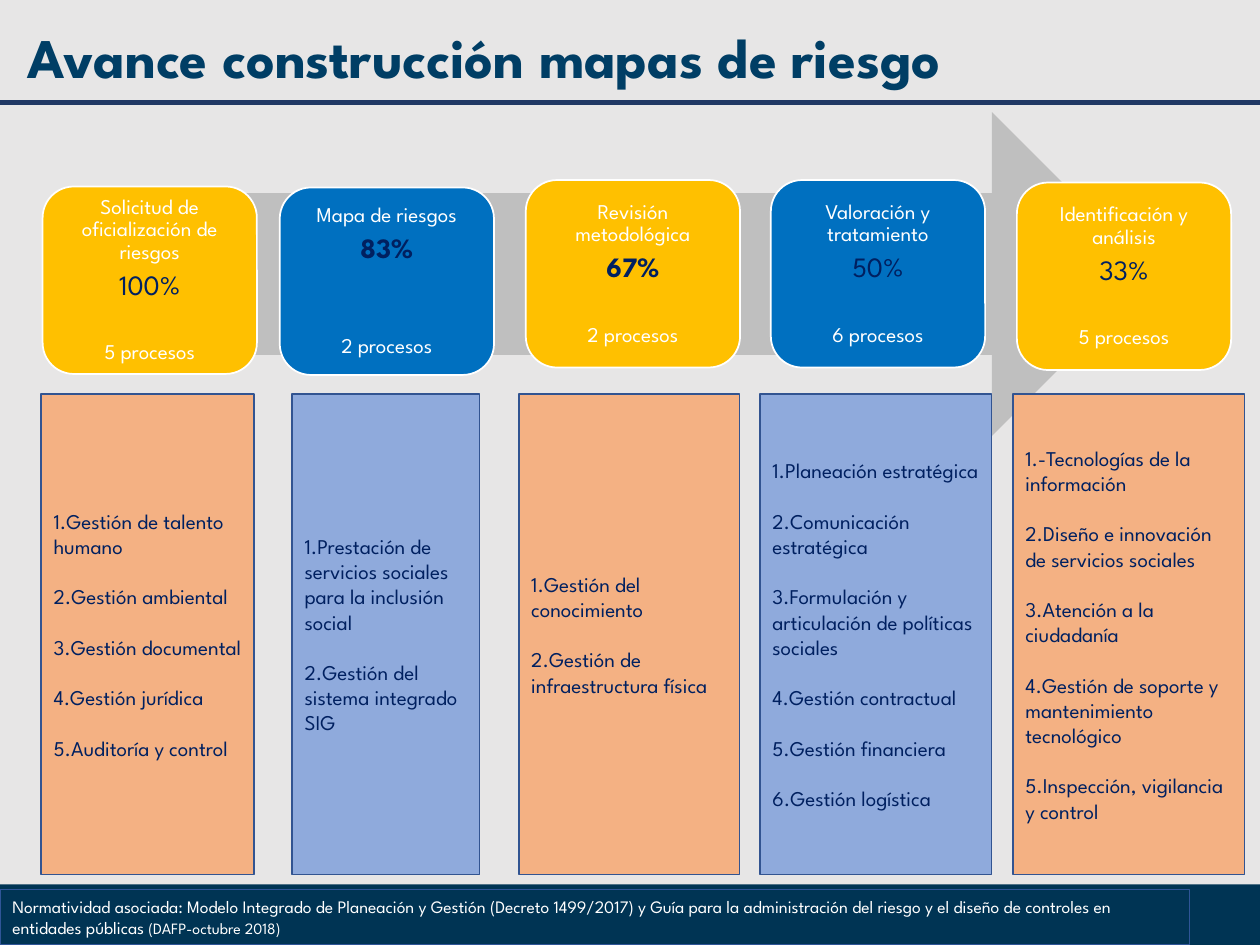
from dataclasses import dataclass

from lxml import etree
from pptx import Presentation
from pptx.dml.color import RGBColor
from pptx.enum.shapes import MSO_CONNECTOR, MSO_SHAPE
from pptx.enum.text import MSO_ANCHOR, PP_ALIGN
from pptx.oxml.ns import qn
from pptx.util import Cm, Pt

RECT, ROUNDED, ARROW = MSO_SHAPE.RECTANGLE, MSO_SHAPE.ROUNDED_RECTANGLE, MSO_SHAPE.RIGHT_ARROW
STRAIGHT = MSO_CONNECTOR.STRAIGHT
TOP, MIDDLE = MSO_ANCHOR.TOP, MSO_ANCHOR.MIDDLE
LEFT, CENTER = PP_ALIGN.LEFT, PP_ALIGN.CENTER


@dataclass(frozen=True)
class Theme:
    font: str = "League Spartan"
    background: str = "E7E6E6"
    band: str = "003454"
    rule: str = "203864"
    title: str = "003E65"
    arrow: str = "BFBFBF"
    ink: str = "002060"
    white: str = "FFFFFF"
    list_border: str = "325491"
    note_border: str = "2F5597"
    card_fills: tuple = ("FFC000", "0070C0")
    list_fills: tuple = ("F4B183", "8FAADC")
    title_size: int = 32
    percent_size: int = 16
    body_size: int = 12
    note_size: int = 10
    source_size: int = 9


THEME = Theme()
SLIDE_WIDTH, SLIDE_HEIGHT = 25.4, 19.05
CARD_WIDTH, CARD_HEIGHT = 4.32, 3.78
LIST_TOP, LIST_HEIGHT = 7.95, 9.68
LINE_HEIGHT = 14.4

STAGES = [
    dict(name="Solicitud de oficialización de riesgos", percent="100%", count="5 procesos",
         card=(0.86, 3.76), column=(0.83, 4.29),
         processes=["Gestión de talento humano", "Gestión ambiental", "Gestión documental",
                    "Gestión jurídica", "Auditoría y control"]),
    dict(name="Mapa de riesgos", percent="83%", count="2 procesos", bold=True, gap=40.3,
         card=(5.64, 3.78), column=(5.89, 3.78),
         processes=["Prestación de servicios sociales para la inclusión social",
                    "Gestión del sistema integrado SIG"]),
    dict(name="Revisión metodológica", percent="67%", count="2 procesos", bold=True,
         card=(10.6, 3.63), column=(10.46, 4.45),
         processes=["Gestión del conocimiento", "Gestión de infraestructura física"]),
    dict(name="Valoración y tratamiento", percent="50%", count="6 procesos",
         card=(15.54, 3.63), column=(15.32, 4.67),
         processes=["Planeación estratégica", "Comunicación estratégica",
                    "Formulación y articulación de políticas sociales",
                    "Gestión contractual", "Gestión financiera", "Gestión logística"]),
    dict(name="Identificación y análisis", percent="33%", count="5 procesos",
         card=(20.5, 3.68), column=(20.42, 4.67),
         processes=["-Tecnologías de la información",
                    "Diseño e innovación de servicios sociales", "Atención a la ciudadanía",
                    "Gestión de soporte y mantenimiento tecnológico",
                    "Inspección, vigilancia y control"]),
]


def color(value):
    return RGBColor.from_string(value)


def add_block(slide, kind, box, fill=None, border=None, border_width=1):
    block = slide.shapes.add_shape(kind, *map(Cm, box))
    block.shadow.inherit = False
    if fill:
        block.fill.solid()
        block.fill.fore_color.rgb = color(fill)
    else:
        block.fill.background()
    if border:
        block.line.color.rgb = color(border)
        block.line.width = Pt(border_width)
    else:
        block.line.fill.background()
    return block


def set_frame(holder, anchor=MIDDLE, margins=(0.25, 0.13)):
    frame = holder.text_frame
    frame.word_wrap = True
    frame.vertical_anchor = anchor
    frame.margin_left = frame.margin_right = Cm(margins[0])
    frame.margin_top = frame.margin_bottom = Cm(margins[1])
    return frame


def write(frame, text, size=THEME.body_size, ink=THEME.ink, bold=False, align=LEFT,
          spacing=1.0, before=0, after=0, numbered=False, same_line=False):
    paragraph = frame.paragraphs[-1]
    if paragraph.runs and not same_line:
        paragraph = frame.add_paragraph()
    if numbered:
        properties = paragraph._p.get_or_add_pPr()
        properties.set("marL", "0")
        properties.set("indent", "0")
        etree.SubElement(properties, qn("a:buFont"), typeface="+mj-lt")
        etree.SubElement(properties, qn("a:buAutoNum"), type="arabicPeriod")
    paragraph.alignment = align
    paragraph.line_spacing = spacing
    paragraph.space_before = Pt(before)
    paragraph.space_after = Pt(after)
    run = paragraph.add_run()
    run.text = text
    run.font.name = THEME.font
    run.font.size = Pt(size)
    run.font.bold = bold
    run.font.color.rgb = color(ink)


def add_header(slide, box):
    left, top, width, height = box
    rule = slide.shapes.add_connector(STRAIGHT, Cm(left), Cm(top + height),
                                      Cm(left + width), Cm(top + height))
    rule.line.color.rgb = color(THEME.rule)
    rule.line.width = Pt(3)
    etree.SubElement(rule._element.spPr, qn("a:effectLst"))
    title = slide.shapes.add_textbox(Cm(left + 0.3), Cm(top + 0.56), Cm(width - 0.6), Cm(1.3))
    write(set_frame(title), "Avance construcción mapas de riesgo", size=THEME.title_size,
          ink=THEME.title, bold=True, spacing=0.9)


def add_card(slide, box, stage, fill):
    card = add_block(slide, ROUNDED, box, fill, THEME.white)
    frame = set_frame(card, margins=(0.13, 0.13))
    layout = dict(align=CENTER, spacing=0.9)
    write(frame, stage["name"], ink=THEME.white, after=4.2, **layout)
    write(frame, stage["percent"], size=THEME.percent_size, bold=stage.get("bold", False), **layout)
    write(frame, stage["count"], ink=THEME.white, before=stage.get("gap", 23), after=4.2, **layout)


def add_process_list(slide, box, processes, fill):
    frame = set_frame(add_block(slide, RECT, box, fill, THEME.list_border))
    for index, process in enumerate(processes):
        write(frame, process, before=LINE_HEIGHT if index else 0, numbered=True)


def add_footer(slide, box):
    left, top, width, height = box
    add_block(slide, RECT, box, THEME.band)
    note = add_block(slide, RECT, (left, top + 0.1, width - 1.42, height - 0.1),
                     border=THEME.note_border, border_width=0.75)
    frame = set_frame(note, anchor=TOP)
    write(frame, "Normatividad asociada: Modelo Integrado de Planeación y Gestión "
          "(Decreto 1499/2017) y Guía para la administración del riesgo y el diseño de "
          "controles en entidades públicas ", size=THEME.note_size, ink=THEME.white)
    write(frame, "(DAFP-octubre 2018)", size=THEME.source_size, ink=THEME.white, same_line=True)


def main():
    deck = Presentation()
    deck.slide_width, deck.slide_height = Cm(SLIDE_WIDTH), Cm(SLIDE_HEIGHT)
    slide = deck.slides.add_slide(deck.slide_layouts[6])
    slide.background.fill.solid()
    slide.background.fill.fore_color.rgb = color(THEME.background)

    add_header(slide, (0, 0, SLIDE_WIDTH, 2.06))
    add_block(slide, ARROW, (2.64, 2.26, 20.62, 6.53), THEME.arrow)
    for index, stage in enumerate(STAGES):
        add_card(slide, (*stage["card"], CARD_WIDTH, CARD_HEIGHT), stage,
                 THEME.card_fills[index % 2])
        left, width = stage["column"]
        add_process_list(slide, (left, LIST_TOP, width, LIST_HEIGHT), stage["processes"],
                         THEME.list_fills[index % 2])
    add_footer(slide, (0, 17.83, SLIDE_WIDTH, 1.22))
    deck.save("out.pptx")


if __name__ == "__main__":
    main()
